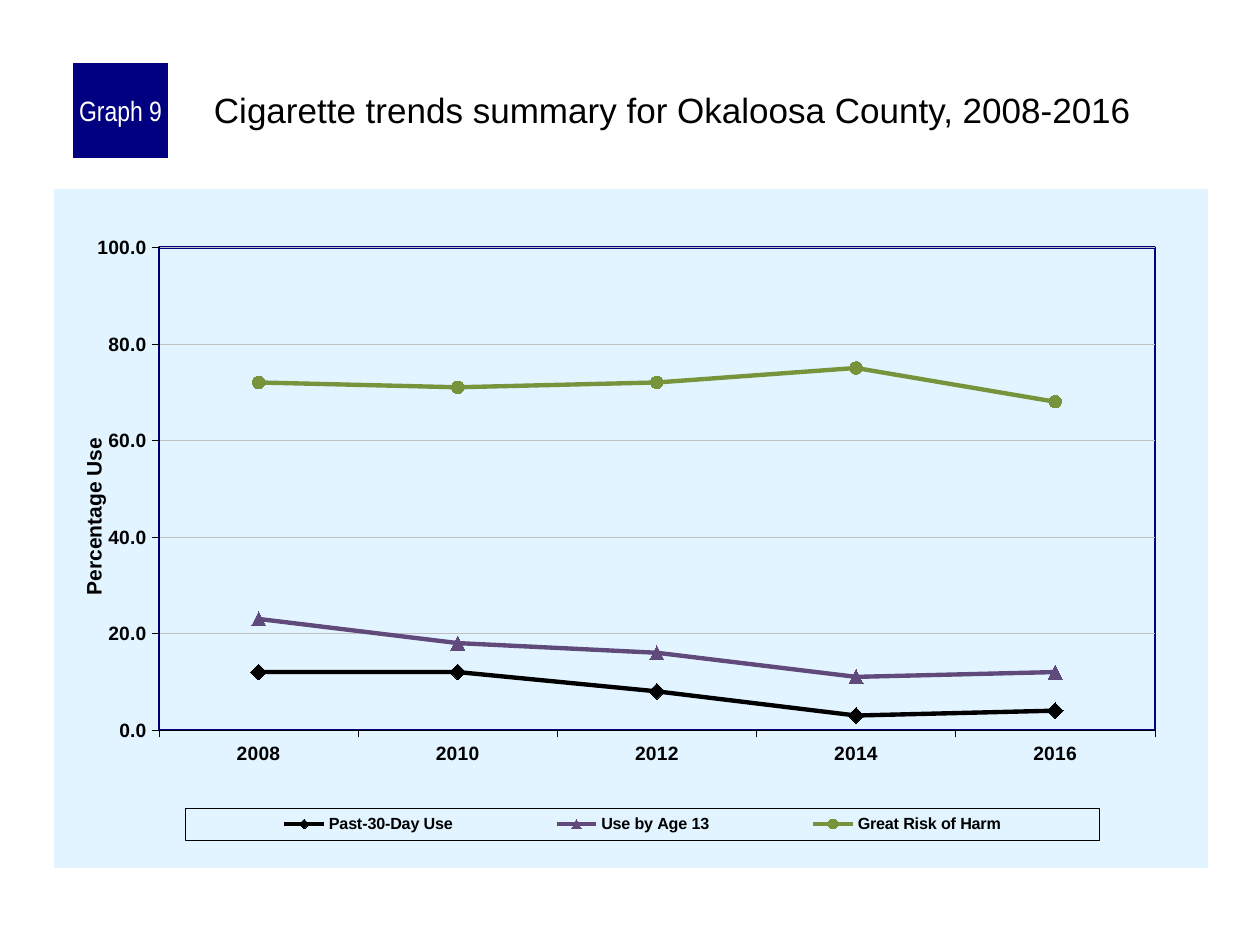
from lxml import etree
from pptx import Presentation
from pptx import util as u
from pptx.chart.data import CategoryChartData
from pptx.dml.color import RGBColor
from pptx.enum import chart as ch, shapes, text
from pptx.oxml import parse_xml
from pptx.oxml.ns import nsdecls, qn

BLACK = RGBColor(0, 0, 0)
WHITE = RGBColor(0xFF, 0xFF, 0xFF)
NAVY = RGBColor(0, 0, 0x80)
SKY = RGBColor(0xE1, 0xF4, 0xFF)
SILVER = RGBColor(0xC0, 0xC0, 0xC0)
PURPLE = RGBColor(0x60, 0x4A, 0x7B)
GREEN = RGBColor(0x77, 0x93, 0x3C)

TITLE = "Cigarette trends summary for Okaloosa County, 2008-2016"
BADGE = "Graph 9"
AXIS_TITLE = "Percentage Use"
YEARS = ["2008", "2010", "2012", "2014", "2016"]
MARK = ch.XL_MARKER_STYLE
SERIES = [
    ("Past-30-Day Use", (12, 12, 8, 3, 4), BLACK, MARK.DIAMOND, 9),
    ("Use by Age 13", (23, 18, 16, 11, 12), PURPLE, MARK.TRIANGLE, 8),
    ("Great Risk of Harm", (72, 71, 72, 75, 68), GREEN, MARK.CIRCLE, 7),
]

PX = 914400 // 126
CHART_BOX = (54, 189, 1154, 679)
BADGE_BOX = (73, 63, 95, 95)
TITLE_BOX = (210, 84, 998, 105)
PLOT_PART = dict(x=0.091, y=0.086, w=0.863, h=0.711)
LEGEND_PART = dict(x=0.114, y=0.912, w=0.792, h=0.047)
AXIS_TITLE_PART = dict(x=0.02, y=0.361)


def px(*lengths):
    return [u.Emu(length * PX) for length in lengths]


def assign(target, **values):
    for name, value in values.items():
        setattr(target, name, value)


def set_font(font, size, color=BLACK, name="Arial", bold=False):
    assign(font, size=u.Pt(size), name=name, bold=bold)
    font.color.rgb = color


def set_line(line, color, width):
    line.color.rgb = color
    line.width = u.Pt(width)


def set_layout(parent, part, after=None, inner=False):
    """Place a chart part by fractions of the chart's area."""
    for old in parent.findall(qn("c:layout")):
        parent.remove(old)
    target = '<c:layoutTarget val="inner"/>' if inner else ""
    modes = "".join(f'<c:{key}Mode val="edge"/>' for key in "xy")
    places = "".join(f'<c:{key} val="{value}"/>' for key, value in part.items())
    layout = parse_xml(f'<c:layout {nsdecls("c")}><c:manualLayout>{target}'
                       f'{modes}{places}</c:manualLayout></c:layout>')
    index = 0 if after is None else parent.index(parent.find(qn(after))) + 1
    parent.insert(index, layout)


def area_format(fill=None, line=None, width=0):
    """Shape properties for chart parts that python-pptx does not format."""
    def paint(color):
        if color is None:
            return "<a:noFill/>"
        return f'<a:solidFill><a:srgbClr val="{color}"/></a:solidFill>'
    return parse_xml(f'<c:spPr {nsdecls("c", "a")}>{paint(fill)}'
                     f'<a:ln w="{int(u.Pt(width))}">{paint(line)}</a:ln></c:spPr>')


def add_text(frame, wording, size, color, name, margins, anchor, align):
    left, top, right, bottom = px(*margins)
    assign(frame, word_wrap=True, margin_left=left, margin_top=top,
           margin_right=right, margin_bottom=bottom, vertical_anchor=anchor)
    para = frame.paragraphs[0]
    para.alignment = align
    span = para.add_run()
    span.text = wording
    set_font(span.font, size, color, name)


def add_trend_chart(page):
    data = CategoryChartData(number_format="0.0")
    data.categories = YEARS
    for name, values, *_ in SERIES:
        data.add_series(name, values)
    chart = page.shapes.add_chart(ch.XL_CHART_TYPE.LINE_MARKERS,
                                  *px(*CHART_BOX), data).chart
    chart.has_title = False
    set_font(chart.font, 8)
    chart.plots[0].vary_by_categories = False

    for series, (_, _, color, style, size) in zip(chart.plots[0].series, SERIES):
        series.smooth = False
        set_line(series.format.line, color, 2.5)
        assign(series.marker, style=style, size=size)
        series.marker.format.fill.solid()
        series.marker.format.fill.fore_color.rgb = color
        set_line(series.marker.format.line, color, 0.75)

    for axis in (chart.category_axis, chart.value_axis):
        assign(axis, major_tick_mark=ch.XL_TICK_MARK.OUTSIDE,
               minor_tick_mark=ch.XL_TICK_MARK.NONE)
        set_font(axis.tick_labels.font, 11, bold=True)
        set_line(axis.format.line, BLACK, 0.25)
    axis = chart.value_axis
    assign(axis, minimum_scale=0, maximum_scale=100, major_unit=20,
           has_major_gridlines=True)
    set_line(axis.major_gridlines.format.line, SILVER, 0.25)
    assign(axis.tick_labels, number_format="0.0", number_format_is_linked=False)
    span = axis.axis_title.text_frame.paragraphs[0].add_run()
    span.text = AXIS_TITLE
    set_font(span.font, 12, bold=True)
    body = axis.axis_title.text_frame._txBody.find(qn("a:bodyPr"))
    body.set("rot", "-5400000")
    body.set("vert", "horz")
    set_layout(axis.axis_title._element, AXIS_TITLE_PART, after="c:tx")

    chart.has_legend = True
    legend = chart.legend
    assign(legend, position=ch.XL_LEGEND_POSITION.RIGHT, include_in_layout=False)
    set_font(legend.font, 9.2, bold=True)
    set_layout(legend._element, LEGEND_PART, after="c:legendPos")
    legend._element.find(qn("c:overlay")).addnext(
        area_format(line=BLACK, width=0.25))

    space = chart._chartSpace
    plot_area = space.chart.plotArea
    set_layout(plot_area, PLOT_PART, inner=True)
    plot_area.append(area_format(line=NAVY, width=1.5))
    space.chart.addnext(area_format(fill=SKY))


def add_badge(page):
    box = page.shapes.add_shape(shapes.MSO_SHAPE.RECTANGLE, *px(*BADGE_BOX))
    box.shadow.inherit = False
    box.fill.solid()
    box.fill.fore_color.rgb = NAVY
    box.line.fill.background()
    add_text(box.text_frame, BADGE, 16, WHITE, "Arial Narrow", (6, 0, 6, 0),
             text.MSO_ANCHOR.MIDDLE, text.PP_ALIGN.CENTER)


def main():
    deck = Presentation()
    deck.slide_width, deck.slide_height = u.Inches(10), u.Inches(7.5)
    page = deck.slides.add_slide(deck.slide_layouts[6])
    add_trend_chart(page)
    add_badge(page)
    title = page.shapes.add_textbox(*px(*TITLE_BOX))
    add_text(title.text_frame, TITLE, 20, BLACK, "Arial", (4, 4, 0, 0),
             text.MSO_ANCHOR.TOP, text.PP_ALIGN.LEFT)
    deck.save("out.pptx")


if __name__ == "__main__":
    main()
